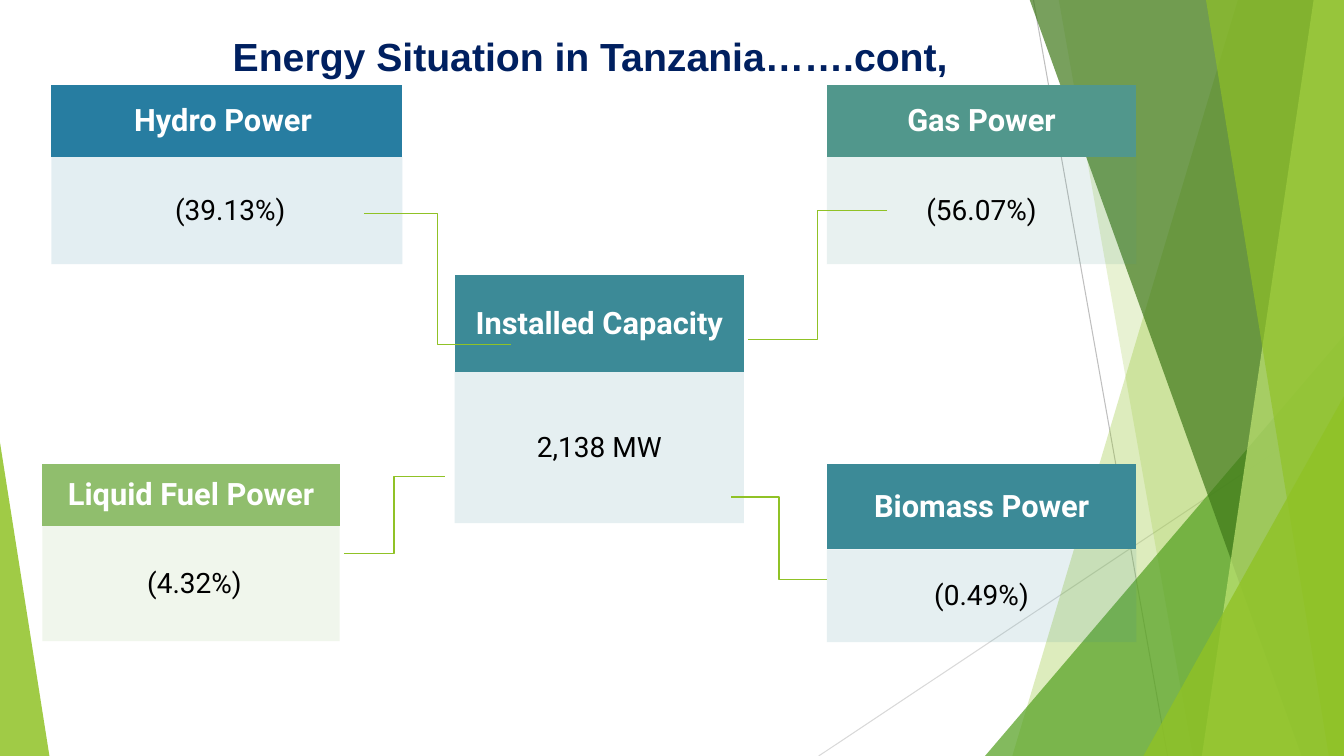
from lxml.etree import SubElement
from pptx import Presentation
from pptx.dml.color import RGBColor
from pptx.enum.shapes import MSO_CONNECTOR as Connector, MSO_SHAPE as Preset
from pptx.enum.text import MSO_ANCHOR as Anchor, PP_ALIGN as Align
from pptx.oxml.ns import qn
from pptx.util import Pt

PX = 9144
WIDTH, HEIGHT = 1333, 750
PLAIN_TABLE = "{2D5ABB26-0587-4C30-8999-92F81FD0307C}"

WHITE = RGBColor(0xFF, 0xFF, 0xFF)
BLACK = RGBColor(0x00, 0x00, 0x00)
NAVY = RGBColor(0x00, 0x20, 0x60)
GRAY = RGBColor(0xBF, 0xBF, 0xBF)
LIGHT_GRAY = RGBColor(0xD9, 0xD9, 0xD9)
LIME = RGBColor(0x90, 0xC2, 0x26)
GREEN = RGBColor(0x54, 0xA0, 0x21)
DARK_GREEN = RGBColor(0x3F, 0x78, 0x19)
PALE_LIME = RGBColor(0xC0, 0xE4, 0x74)
BLUE = RGBColor(0x27, 0x7D, 0xA1)
TEAL = RGBColor(0x3C, 0x8A, 0x97)
SEA = RGBColor(0x51, 0x97, 0x8C)
LEAF = RGBColor(0x90, 0xBE, 0x6D)


def paint(fill, color, opacity, parent):
    fill.solid()
    fill.fore_color.rgb = color
    if opacity < 100:
        tint = next(parent.iter(qn("a:srgbClr")))
        SubElement(tint, qn("a:alpha"), val=str(opacity * 1000))


def connect(kind, ends, color, weight):
    connector = slide.shapes.add_connector(kind, *(end * PX for end in ends))
    connector.line.color.rgb = color
    connector.line.width = Pt(weight)
    SubElement(connector._element.spPr, qn("a:effectLst"))


presentation = Presentation()
presentation.slide_width = WIDTH * PX
presentation.slide_height = HEIGHT * PX
slide = presentation.slides.add_slide(presentation.slide_layouts[6])

connect(Connector.STRAIGHT, (1025, 0, 1158, HEIGHT), GRAY, 0.75)
connect(Connector.STRAIGHT, (WIDTH, 403, 812, HEIGHT), LIGHT_GRAY, 0.75)

bands = [
    ("band", 1228, 1004, LIME, 30),
    ("band", 1050, 1183, LIME, 20),
    ("triangle", (977, 333, 356, 417), 1, GREEN, 72),
    ("band", 1021, 1291, DARK_GREEN, 70),
    ("band", 1303, 1192, PALE_LIME, 70),
    ("band", 1196, 1318, LIME, 65),
    ("triangle", (1134, 393, 199, 357), 1, LIME, 80),
    ("triangle", (0, 439, 49, 311), 0, LIME, 85),
]
for kind, first, second, color, opacity in bands:
    if kind == "band":
        builder = slide.shapes.build_freeform(first, -1, scale=PX)
        builder.add_line_segments([(WIDTH, -1), (WIDTH, HEIGHT), (second, HEIGHT)], close=True)
        shape = builder.convert_to_shape()
    else:
        box = (length * PX for length in first)
        shape = slide.shapes.add_shape(Preset.ISOSCELES_TRIANGLE, *box)
        shape.adjustments[0] = second
    shape.shadow.inherit = False
    shape.line.fill.background()
    paint(shape.fill, color, opacity, shape._element.spPr)

cards = [
    (451, 273, 287, (96, 150), 3, TEAL, "Installed Capacity", "2,138 MW"),
    (820, 84, 307, (72, 106), 3, SEA, "Gas Power", "(56.07%)"),
    (820, 460, 307, (85, 92), 3, TEAL, "Biomass Power", "(0.49%)"),
    (51, 84, 348, (72, 106), 1, BLUE, "Hydro Power ", " (39.13%)"),
    (42, 460, 295, (62, 114), 3, LEAF, "Liquid Fuel Power", " (4.32%)"),
]
for left, top, width, heights, columns, color, heading, value in cards:
    frame = slide.shapes.add_table(2, columns, left * PX, top * PX, width * PX, sum(heights) * PX)
    table = frame.table
    table.first_row = table.horz_banding = False
    table._tbl.tblPr.find(qn("a:tableStyleId")).text = PLAIN_TABLE
    rows = [(heading, 22, WHITE, True, 100), (value, 20, BLACK, False, 13)]
    for index, (text, size, text_color, bold, opacity) in enumerate(rows):
        table.rows[index].height = heights[index] * PX
        cell = table.cell(index, 0)
        if columns > 1:
            cell.merge(table.cell(index, columns - 1))
        paint(cell.fill, color, opacity, cell._tc.tcPr)
        cell.vertical_anchor = Anchor.MIDDLE
        cell.margin_left = cell.margin_right = 13 * PX
        cell.margin_top = cell.margin_bottom = 13 * PX
        paragraph = cell.text_frame.paragraphs[0]
        paragraph.alignment = Align.CENTER
        run = paragraph.add_run()
        run.text = text
        run.font.name = "Roboto"
        run.font.size = Pt(size)
        run.font.bold = bold
        run.font.color.rgb = text_color

links = [
    (361, 212, 507, 342),
    (880, 209, 742, 337),
    (341, 549, 441, 473),
    (820, 575, 725, 493),
]
for ends in links:
    connect(Connector.ELBOW, ends, LIME, 1)

title = slide.shapes.add_textbox(221 * PX, 27 * PX, 865 * PX, 57 * PX)
title.text_frame.word_wrap = True
run = title.text_frame.paragraphs[0].add_run()
run.text = "Energy Situation in Tanzania…….cont,"
run.font.name = "Arial"
run.font.size = Pt(28)
run.font.bold = True
run.font.color.rgb = NAVY

presentation.save("out.pptx")
